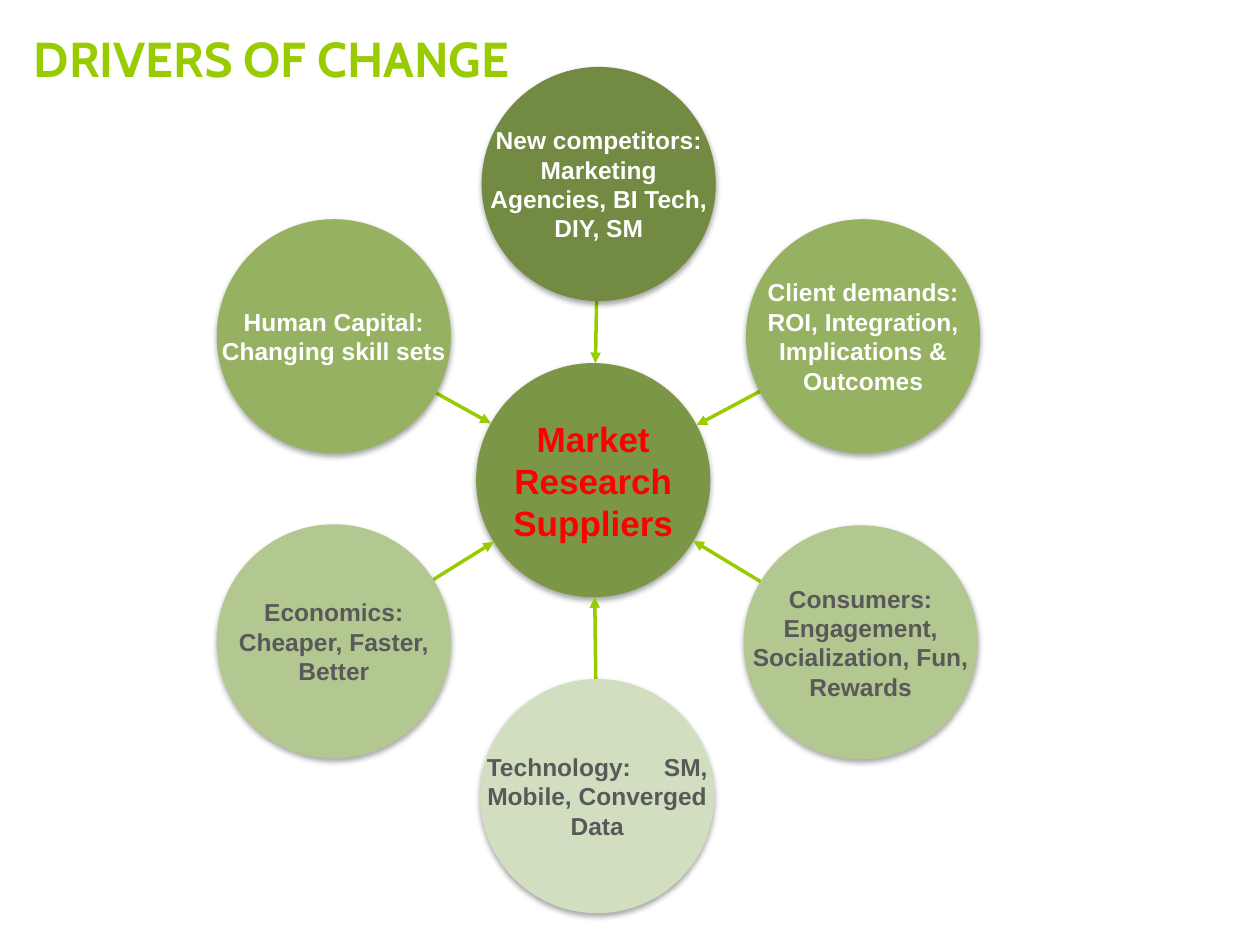
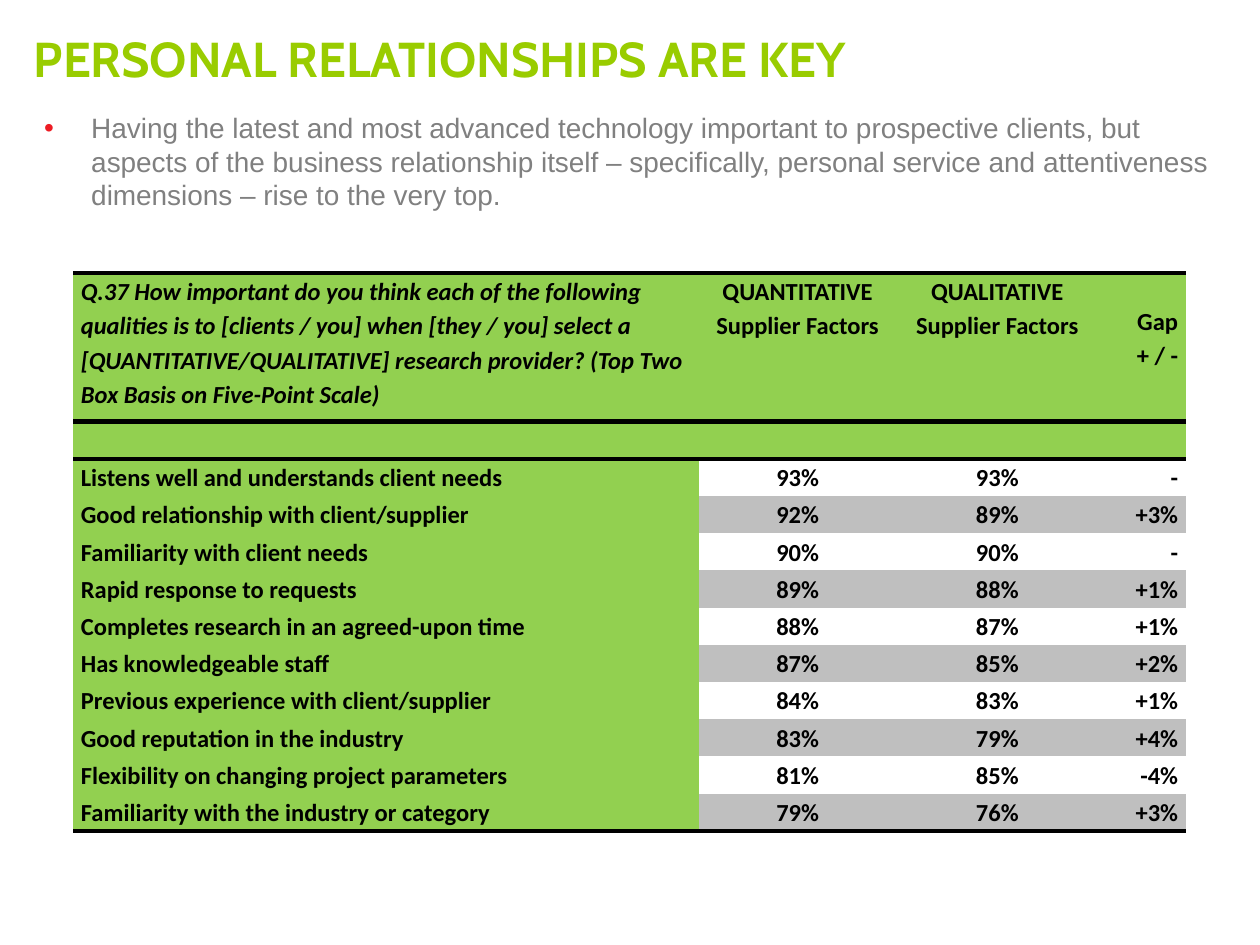
from math import hypot

from lxml import etree
from pptx import Presentation
from pptx.dml.color import RGBColor
from pptx.enum.shapes import MSO_CONNECTOR, MSO_SHAPE
from pptx.enum.text import MSO_ANCHOR, PP_ALIGN
from pptx.oxml import parse_xml
from pptx.oxml.ns import qn
from pptx.util import Cm, Pt

LEFT, MID, RIGHT = PP_ALIGN.LEFT, PP_ALIGN.CENTER, PP_ALIGN.RIGHT
TOP, CENTRE = MSO_ANCHOR.TOP, MSO_ANCHOR.MIDDLE
OVAL, LINE = MSO_SHAPE.OVAL, MSO_CONNECTOR.STRAIGHT
NS = 'xmlns:a="http://schemas.openxmlformats.org/drawingml/2006/main"'
PLAIN = "{2D5ABB26-0587-4C30-8999-92F81FD0307C}"  # table style without grid

# Colours and text formats
LIME, GREEN, GREY = "99CC00", "92D050", "BFBFBF"
WHITE, BLACK, DARK = "FFFFFF", "000000", "595959"
HEAD = dict(name="Cabin", size=Pt(28), bold=True, color=LIME)
BODY = dict(name="Arial", size=Pt(16), color="808080")
NODE = dict(name="Arial", size=Pt(14), bold=True)
CORE = dict(name="Arial", size=Pt(20), bold=True, color="FF0000")
CELL = dict(name="Calibri", size=Pt(14), bold=True, color=BLACK)

# Slide 1: centre x, centre y (cm), fill, text colour, text
SIZE = 4.72
HUB = (11.96, 9.68, "7C9647", "Market Research Suppliers")
NODES = [
    (12.07, 3.71, "738A42", WHITE,
     "New competitors: Marketing Agencies, BI Tech, DIY, SM"),
    (17.4, 6.78, "95B161", WHITE,
     "Client demands: ROI, Integration, Implications & Outcomes"),
    (17.35, 12.95, "B3C791", DARK,
     "Consumers: Engagement, Socialization, Fun, Rewards"),
    (12.04, 16.05, "D2DEC0", DARK,
     "Technology:\tSM, Mobile, Converged Data"),
    (6.73, 12.93, "B3C791", DARK, "Economics: Cheaper, Faster, Better"),
    (6.73, 6.78, "95B161", WHITE, "Human Capital: Changing skill sets"),
]

# Slide 2
POINT = ("Having the latest and most advanced technology important to "
         "prospective clients, but aspects of the business relationship "
         "itself – specifically, personal service and attentiveness "
         "dimensions – rise to the very top.")
ROWS = [
    ("Q.37 How important do you think each of the following qualities is to "
     "[clients / you] when [they / you] select a [QUANTITATIVE/QUALITATIVE] "
     "research provider? (Top Two Box Basis on Five-Point Scale)",
     "QUANTITATIVE\vSupplier Factors", "QUALITATIVE\vSupplier Factors",
     "Gap\n+ / -"),
    ("", "", "", ""),
    ("Listens well and understands client needs", "93%", "93%", "-"),
    ("Good relationship with client/supplier", "92%", "89%", "+3%"),
    ("Familiarity with client needs", "90%", "90%", "-"),
    ("Rapid response to requests", "89%", "88%", "+1%"),
    ("Completes research in an agreed-upon time", "88%", "87%", "+1%"),
    ("Has knowledgeable staff", "87%", "85%", "+2%"),
    ("Previous experience with client/supplier", "84%", "83%", "+1%"),
    ("Good reputation in the industry", "83%", "79%", "+4%"),
    ("Flexibility on changing project parameters", "81%", "85%", "-4%"),
    ("Familiarity with the industry or category", "79%", "76%", "+3%"),
]
WIDTHS = (12.62, 3.96, 4.09, 1.75)
ALIGNS = (LEFT, MID, MID, RIGHT)


def rgb(code):
    return RGBColor.from_string(code)


def assign(item, **values):
    for key, value in values.items():
        setattr(item, key, value)


def style(para, form, **layout):
    """Format a paragraph and each of its runs."""
    assign(para, **layout)
    for run in para.runs or [para.add_run()]:
        for key, value in form.items():
            if key == "color":
                run.font.color.rgb = rgb(value)
            else:
                setattr(run.font, key, value)


def add_slide(deck, title, width):
    slide = deck.slides.add_slide(deck.slide_layouts[5])
    box = slide.shapes.title
    assign(box, left=Cm(0.43), top=Cm(0.43), width=Cm(width), height=Cm(1.47))
    assign(box.text_frame, text=title, vertical_anchor=CENTRE)
    style(box.text_frame.paragraphs[0], HEAD, alignment=LEFT)
    return slide


def add_text(slide, place, text, inset, anchor):
    frame = slide.shapes.add_textbox(*map(Cm, place)).text_frame
    assign(frame, text=text, word_wrap=True, vertical_anchor=anchor)
    if inset is not None:
        assign(frame, **{f"margin_{side}": Cm(inset)
                         for side in ("left", "right", "top", "bottom")})
    return frame.paragraphs[0]


def add_disc(slide, x, y, fill, text, form):
    """A shaded circle with its label on top."""
    place = (x - SIZE / 2, y - SIZE / 2, SIZE, SIZE)
    disc = slide.shapes.add_shape(OVAL, *map(Cm, place))
    disc.fill.solid()
    disc.fill.fore_color.rgb = rgb(fill)
    disc.line.fill.background()
    disc.shadow.inherit = False
    disc._element.spPr.find(qn("a:effectLst")).append(parse_xml(
        f'<a:outerShdw {NS} blurRad="39400" dist="22900" dir="5400000" '
        f'rotWithShape="0"><a:srgbClr val="{BLACK}"><a:alpha val="35000"/>'
        '</a:srgbClr></a:outerShdw>'))
    para = add_text(slide, place, text, 0.03, CENTRE)
    if "\t" in text:
        para._p.get_or_add_pPr().append(parse_xml(
            f'<a:tabLst {NS}><a:tab pos="{Cm(3.57)}" algn="l"/></a:tabLst>'))
    style(para, form, alignment=MID)


def add_arrow(slide, x, y):
    """An arrow from the edge of a node to the edge of the hub."""
    dx, dy = x - HUB[0], y - HUB[1]
    part = SIZE / 2 / hypot(dx, dy)
    ends = (x - dx * part, y - dy * part,
            HUB[0] + dx * part, HUB[1] + dy * part)
    arrow = slide.shapes.add_connector(LINE, *map(Cm, ends))
    arrow.line.color.rgb = rgb(LIME)
    arrow.line.width = Pt(2)
    arrow.line._get_or_add_ln().append(
        parse_xml(f'<a:tailEnd {NS} type="triangle"/>'))
    etree.SubElement(arrow._element.spPr, qn("a:effectLst"))


def add_rule(cell, side):
    cell._tc.get_or_add_tcPr().append(parse_xml(
        f'<a:ln{side} {NS} w="{Pt(3)}"><a:solidFill><a:srgbClr val="{BLACK}"/>'
        f'</a:solidFill></a:ln{side}>'))


def fill_cell(cell, row, col):
    # Rules go above and below the header and under the last row
    if row in (0, 1):
        add_rule(cell, "T")
    if row in (0, len(ROWS) - 1):
        add_rule(cell, "B")
    if row < 2 or col == 0 or row % 2:
        cell.fill.solid()
        cell.fill.fore_color.rgb = rgb(GREEN if row < 2 or col == 0 else GREY)
    else:
        cell.fill.background()
    drop = 0.6 if row == 0 and col == 3 else 0
    assign(cell, text=ROWS[row][col], vertical_anchor=TOP,
           margin_left=Cm(0.15), margin_right=Cm(0.15),
           margin_top=Cm(drop), margin_bottom=0)
    form = dict(CELL, italic=row == 0 and col == 0)
    for para in cell.text_frame.paragraphs:
        style(para, form, alignment=ALIGNS[col], line_spacing=1.15)


def add_grid(slide):
    place = (1.48, 5.5, sum(WIDTHS), 11.25)
    table = slide.shapes.add_table(
        len(ROWS), len(WIDTHS), *map(Cm, place)).table
    assign(table, first_row=False, horz_banding=False)
    table._tbl.tblPr.find(qn("a:tableStyleId")).text = PLAIN
    for column, width in zip(table.columns, WIDTHS):
        column.width = Cm(width)
    for row, line in enumerate(table.rows):
        line.height = Cm(0.75 if row else 3)
        for col, cell in enumerate(line.cells):
            fill_cell(cell, row, col)


def main():
    deck = Presentation()
    assign(deck, slide_width=Cm(25.4), slide_height=Cm(19.05))

    # Drivers around the hub
    slide = add_slide(deck, "DRIVERS OF CHANGE", 13.54)
    add_disc(slide, *HUB, CORE)
    for x, y, fill, ink, text in NODES:
        add_arrow(slide, x, y)
        add_disc(slide, x, y, fill, text, dict(NODE, color=ink))

    # Key point and table of factors
    slide = add_slide(deck, "PERSONAL RELATIONSHIPS ARE KEY", 22.86)
    add_grid(slide)
    para = add_text(slide, (0.64, 2.11, 24.13, 3.81), POINT, None, TOP)
    props = para._p.get_or_add_pPr()
    props.set("marL", str(Cm(0.95)))
    props.set("indent", str(-Cm(0.95)))
    for bit in ('buClr {}><a:srgbClr val="ED1C24"/></a:buClr>',
                'buFont {} typeface="Arial"/>', 'buChar {} char="•"/>'):
        props.append(parse_xml("<a:" + bit.format(NS)))
    style(para, BODY)

    deck.save("out.pptx")


if __name__ == "__main__":
    main()
